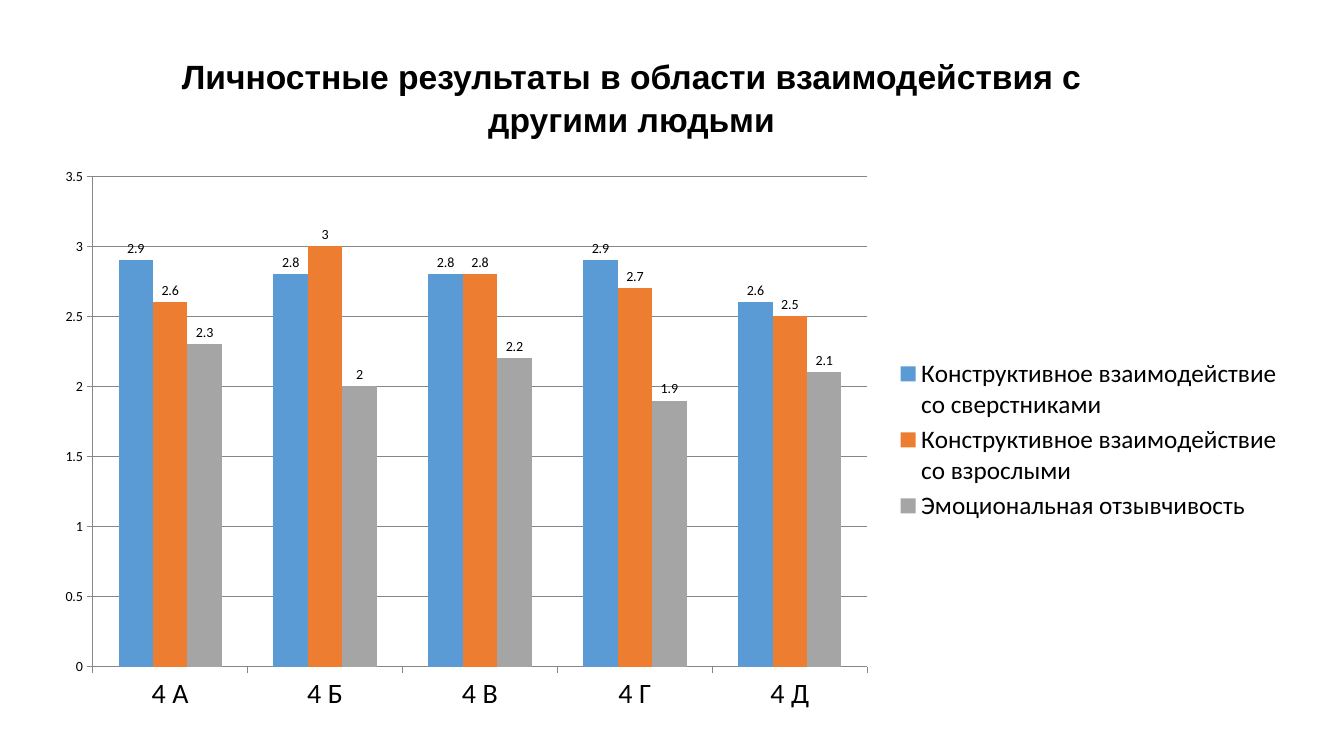
"""Build a slide with a clustered column chart of pupils' interaction results."""
from pptx import Presentation
from pptx.chart.data import CategoryChartData
from pptx.dml.color import RGBColor
from pptx.enum.chart import XL_CHART_TYPE as ChartType
from pptx.enum.chart import XL_LABEL_POSITION as LabelPosition
from pptx.enum.chart import XL_LEGEND_POSITION as LegendPosition
from pptx.enum.chart import XL_TICK_MARK as TickMark
from pptx.enum.text import MSO_ANCHOR, PP_ALIGN
from pptx.util import Cm, Pt

BLACK = RGBColor(0x00, 0x00, 0x00)
BLUE = RGBColor(0x5B, 0x9B, 0xD5)
ORANGE = RGBColor(0xED, 0x7D, 0x31)
GRAY = RGBColor(0xA5, 0xA5, 0xA5)
AXIS_GRAY = RGBColor(0x87, 0x87, 0x87)

CLASSES = ["4 А", "4 Б", "4 В", "4 Г", "4 Д"]
RESULTS = [
    ("Конструктивное взаимодействие со сверстниками", [2.9, 2.8, 2.8, 2.9, 2.6], BLUE),
    ("Конструктивное взаимодействие со взрослыми", [2.6, 3, 2.8, 2.7, 2.5], ORANGE),
    ("Эмоциональная отзывчивость", [2.3, 2, 2.2, 1.9, 2.1], GRAY),
]

presentation = Presentation()
presentation.slide_width = Cm(33.87)
presentation.slide_height = Cm(19.05)
slide = presentation.slides.add_slide(presentation.slide_layouts[5])

title = slide.shapes.title
title.left, title.top, title.width, title.height = Cm(2.72), Cm(1.27), Cm(26.39), Cm(2.31)
title.text_frame.text = "Личностные результаты в области взаимодействия с другими людьми"
title.text_frame.word_wrap = True
title.text_frame.vertical_anchor = MSO_ANCHOR.MIDDLE
paragraph = title.text_frame.paragraphs[0]
paragraph.alignment = PP_ALIGN.CENTER
paragraph.line_spacing = 1.07
paragraph.font.name = "Arial"
paragraph.font.size = Pt(24)
paragraph.font.bold = True
paragraph.font.color.rgb = BLACK

chart_data = CategoryChartData(number_format="General")
chart_data.categories = CLASSES
for name, values, color in RESULTS:
    chart_data.add_series(name, values)
chart = slide.shapes.add_chart(
    ChartType.COLUMN_CLUSTERED, Cm(1.02), Cm(3.96), Cm(31.57), Cm(14.25), chart_data
).chart
chart.has_title = False
chart.font.name = "Calibri"
chart.font.size = Pt(10)
chart.font.color.rgb = BLACK

chart.has_legend = True
chart.legend.position = LegendPosition.RIGHT
chart.legend.include_in_layout = False
chart.legend.font.size = Pt(18)

for axis in (chart.category_axis, chart.value_axis):
    axis.major_tick_mark = TickMark.OUTSIDE
    axis.minor_tick_mark = TickMark.NONE
    axis.format.line.color.rgb = AXIS_GRAY
    axis.format.line.width = Pt(0.75)
chart.category_axis.tick_labels.font.size = Pt(20)
chart.value_axis.minimum_scale = 0
chart.value_axis.maximum_scale = 3.5
chart.value_axis.major_unit = 0.5
chart.value_axis.has_major_gridlines = True
gridline = chart.value_axis.major_gridlines.format.line
gridline.color.rgb = AXIS_GRAY
gridline.width = Pt(0.75)

plot = chart.plots[0]
plot.vary_by_categories = False
plot.gap_width = 150
plot.overlap = 0
for series, (name, values, color) in zip(plot.series, RESULTS):
    series.format.fill.solid()
    series.format.fill.fore_color.rgb = color
    series.data_labels.show_value = True
    series.data_labels.position = LabelPosition.OUTSIDE_END

presentation.save("out.pptx")
